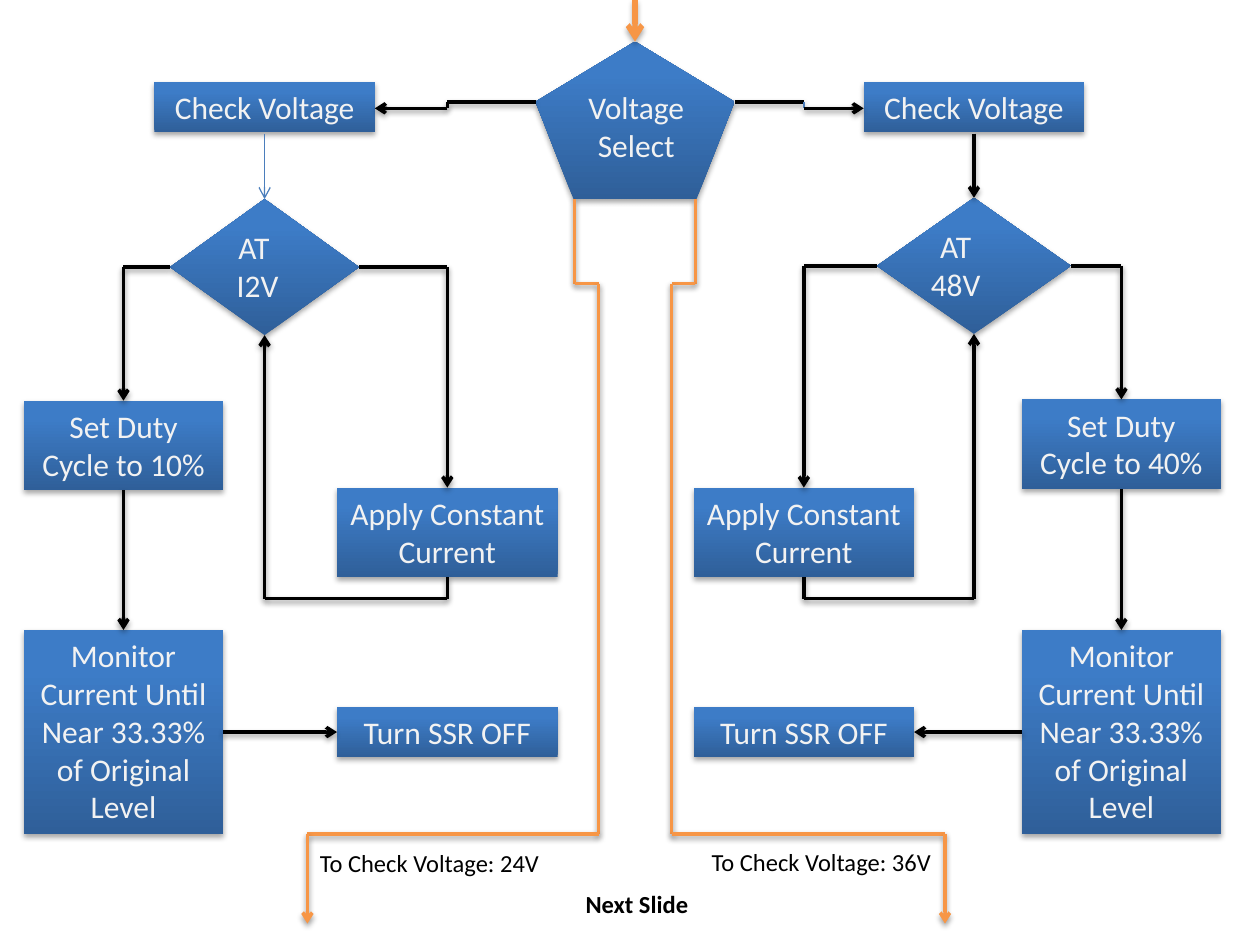
from dataclasses import dataclass
from itertools import pairwise

from pptx import Presentation
from pptx.dml.color import RGBColor
from pptx.enum.shapes import MSO_CONNECTOR, MSO_SHAPE
from pptx.enum.text import MSO_ANCHOR, MSO_AUTO_SIZE, PP_ALIGN
from pptx.oxml import parse_xml
from pptx.oxml.ns import nsdecls, qn
from pptx.util import Inches, Pt

DARK = RGBColor(0x2F, 0x5F, 0x99)
LIGHT = RGBColor(0x3D, 0x7C, 0xC7)
BLUE = RGBColor(0x4B, 0x7E, 0xBC)
ORANGE = RGBColor(0xF7, 0x96, 0x46)
BLACK = RGBColor(0, 0, 0)
PALE = RGBColor(0xF2, 0xF2, 0xF2)

# Grid: 10 columns by 7.5 rows of square cells
COLS, ROWS = 10, 7.5
AXIS = 5.04
WIDE, SLIM = 1.75, 1.58
ONE, TWO, FIVE = 0.4, 0.71, 1.62  # box heights by lines of text


@dataclass
class Pen:
    color: RGBColor
    width: float
    alpha: int  # shadow strength in percent, 0 for none


INK = Pen(BLACK, 2, 38)
THIN = Pen(BLUE, 0.75, 0)
EXIT = Pen(ORANGE, 2, 38)
ENTRY = Pen(ORANGE, 3, 35)


@dataclass
class Side:
    sign: int     # direction towards the axis
    outer: float  # column centres
    mid: float
    inner: float
    leave: float  # column of the exit arrow
    half: float   # half width of the decision
    rise: float
    jog: Pen
    drop: Pen
    volt: str
    duty: str
    goal: str
    note: tuple[float, float]
    pads: tuple[float, float]  # right of "AT", left of the voltage


SIDES = [
    Side(1, 0.98, 2.1, 3.55, 2.44, 0.75, 0, INK, THIN, "I2V", "10%", "24V",
         (2.44, 6.68), (0.17, 0.06)),
    Side(-1, 8.9, 7.73, 6.38, 7.5, 0.77, 0.01, THIN, INK, "48V", "40%", "36V",
         (5.55, 6.67), (0.29, 0)),
]

deck = Presentation()
deck.slide_width, deck.slide_height = Inches(COLS), Inches(ROWS)
slide = deck.slides.add_slide(deck.slide_layouts[6])
shapes = slide.shapes


def shade(shape, alpha: int) -> None:
    """Give a shape or line a soft shadow below, or none."""
    drop = (
        '<a:outerShdw blurRad="40000" dist="22000" dir="5400000" rotWithShape="0">'
        f'<a:srgbClr val="000000"><a:alpha val="{alpha * 1000}"/></a:srgbClr>'
        "</a:outerShdw>"
    ) if alpha else ""
    shape.element.spPr.append(
        parse_xml(f'<a:effectLst {nsdecls("a")}>{drop}</a:effectLst>'))


def write(shape, text: str, size: float = 18, color: RGBColor = PALE,
          align: PP_ALIGN = PP_ALIGN.CENTER, bold: bool = False) -> None:
    frame = shape.text_frame
    frame.word_wrap = True
    frame.auto_size = MSO_AUTO_SIZE.SHAPE_TO_FIT_TEXT
    frame.vertical_anchor = MSO_ANCHOR.TOP
    frame.text = text
    for para in frame.paragraphs:
        para.alignment = align
        para.font.name, para.font.size = "Calibri", Pt(size)
        para.font.color.rgb, para.font.bold = color, bold


def block(kind: MSO_SHAPE, mid: float, top: float, wide: float, high: float):
    """Draw a shaded blue shape centred on a column."""
    shape = shapes.add_shape(kind, Inches(mid - wide / 2), Inches(top),
                             Inches(wide), Inches(high))
    shape.fill.gradient()
    shape.fill.gradient_angle = 90
    for stop, color, place in zip(shape.fill.gradient_stops, (DARK, LIGHT), (0, 0.8)):
        stop.color.rgb, stop.position = color, place
    shape.line.fill.background()
    shade(shape, 35)
    return shape


def box(mid: float, top: float, wide: float, high: float, text: str) -> None:
    write(block(MSO_SHAPE.RECTANGLE, mid, top, wide, high), text)


def label(left: float, top: float, wide: float, high: float, text: str, **style):
    shape = shapes.add_textbox(Inches(left), Inches(top), Inches(wide), Inches(high))
    write(shape, text, **style)
    return shape


def route(pen: Pen, *points: tuple[float, float], head: bool = True) -> None:
    """Join points with straight lines, the last one with an arrowhead."""
    for start, end in pairwise(points):
        line = shapes.add_connector(MSO_CONNECTOR.STRAIGHT,
                                    *(Inches(n) for n in start + end))
        line.line.color.rgb, line.line.width = pen.color, Pt(pen.width)
        if head and end == points[-1]:
            line.element.spPr.find(qn("a:ln")).append(
                parse_xml(f'<a:tailEnd type="arrow" {nsdecls("a")}/>'))
        shade(line, pen.alpha)


def branch(s: Side) -> None:
    # Boxes
    box(s.mid, 0.65, WIDE, ONE, "Check Voltage")
    box(s.outer, 3.18 - s.rise, SLIM, TWO, f"Set Duty Cycle to {s.duty}")
    box(s.inner, 3.87, WIDE, TWO, "Apply Constant Current")
    box(s.outer, 5, SLIM, FIVE, "Monitor Current Until Near 33.33% of Original Level")
    box(s.inner, 5.61, WIDE, ONE, "Turn SSR OFF")

    # Decision and its two offset lines
    top = 1.58 - s.rise
    block(MSO_SHAPE.FLOWCHART_DECISION, s.mid, top, 2 * s.half, 1.08)
    name = label(s.mid - 0.37, top + 0.18, 0.74, TWO, f"AT\n{s.volt}")
    name.text_frame.margin_left = name.text_frame.margin_right = 0
    for para, side, pad in zip(name.text_frame.paragraphs, ("marR", "marL"), s.pads):
        para._p.get_or_add_pPr().set(side, str(Inches(pad)))

    # From the selector to the decision
    edge, row = s.mid + s.sign * WIDE / 2, top + 0.54
    route(INK, (AXIS - s.sign * 0.79, 0.81), (s.inner, 0.81), head=False)
    route(s.jog, (s.inner, 0.81), (s.inner, 0.86), head=False)
    route(INK, (s.inner, 0.86), (edge, 0.86))
    route(s.drop, (s.mid, 1.06), (s.mid, top))

    # Both outcomes and the loop back
    route(INK, (s.mid - s.sign * s.half, row), (s.outer, row), (s.outer, 3.18 - s.rise))
    route(INK, (s.mid + s.sign * s.half, row), (s.inner, row), (s.inner, 3.87))
    route(INK, (s.inner, 4.58), (s.inner, 4.75), (s.mid, 4.75), (s.mid, top + 1.08))
    route(INK, (s.outer, 3.89 - s.rise), (s.outer, 5))
    route(INK, (s.outer + s.sign * SLIM / 2, 5.81), (s.inner - s.sign * WIDE / 2, 5.81))

    # Exit to the next slide
    far, near = AXIS - s.sign * 0.48, AXIS - s.sign * 0.29
    route(EXIT, (far, 1.58), (far, 2.25), (near, 2.25), (near, 6.62),
          (s.leave, 6.62), (s.leave, 7.33))
    label(*s.note, 2.07, 0.34, f"To Check Voltage: {s.goal}",
          size=14, color=BLACK, align=PP_ALIGN.LEFT)


# Selector
block(MSO_SHAPE.REGULAR_PENTAGON, AXIS, 0.33, SLIM, 1.25)
label(4.51, 0.65, 1.08, TWO, "Voltage Select")

for side in SIDES:
    branch(side)

# Entry arrow and footer
label(4.02, 7.01, 2.07, 0.34, "Next Slide", size=14, color=BLACK, bold=True)
route(ENTRY, (AXIS, 0), (AXIS, 0.33))

deck.save("out.pptx")
